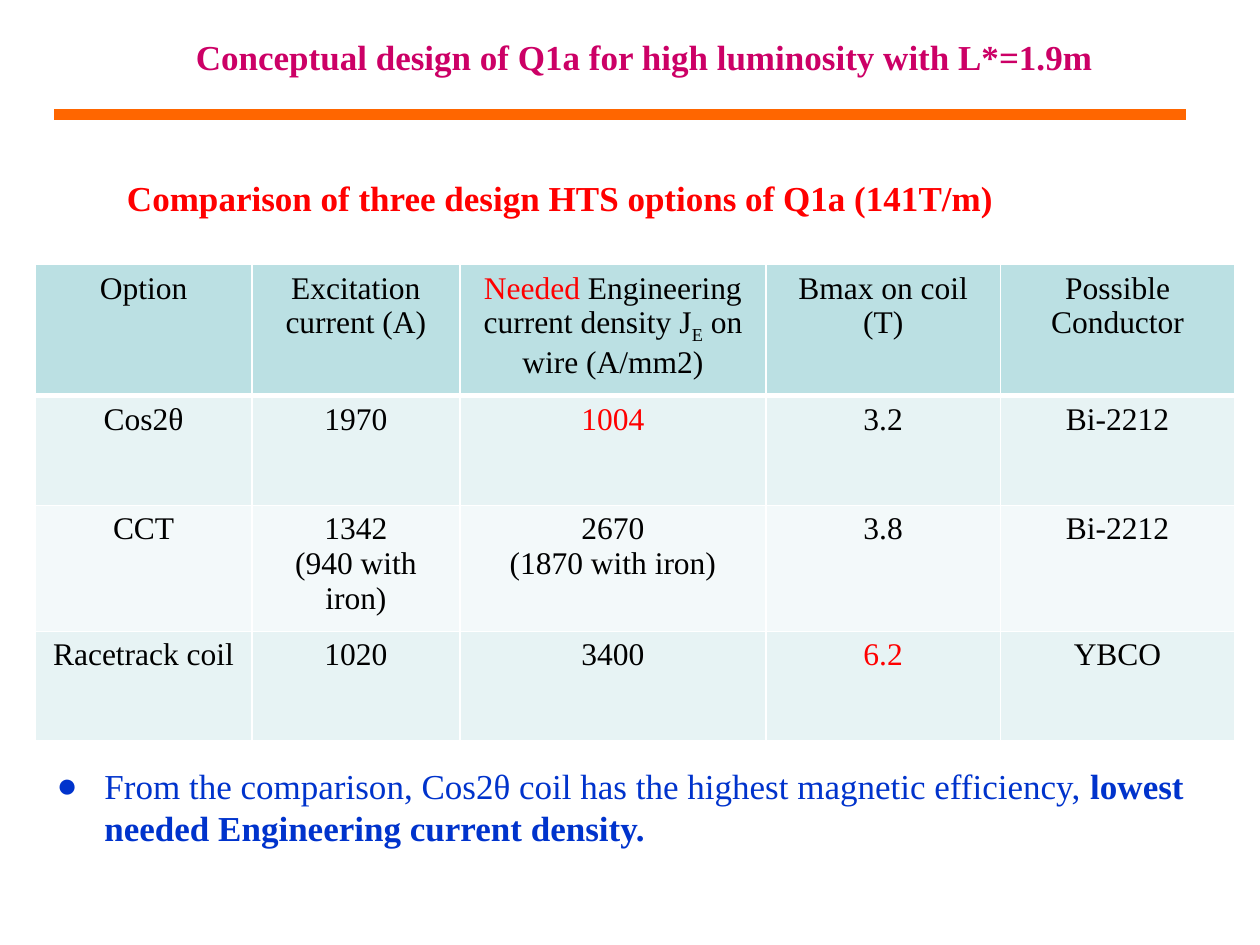
from lxml import etree
from pptx import Presentation
from pptx import util as u
from pptx.dml.color import RGBColor
from pptx.enum import shapes, text
from pptx.oxml import parse_xml
from pptx.oxml.ns import nsdecls, qn

FONT = "Times New Roman"
BLACK, RED, BLUE = "000000", "FF0000", "0033CC"
MAGENTA, ORANGE, WHITE = "CC0066", "FF6600", "FFFFFF"
HEADER_FILL, BAND_FILLS = "BBE0E3", ("E7F3F4", "F3F9FA")

COLUMN_WIDTHS = (1.72, 1.65, 2.43, 1.86, 1.86)
# A cell is a list of paragraphs, a paragraph is a list of (text, style) runs.
NEEDED_DENSITY = [[
    ("Needed", {"color": RED}),
    (" Engineering current density J", {}),
    ("E", {"baseline": -25}),
    (" on wire (A/mm2)", {}),
]]
OPTIONS = (
    ("Option", "Excitation current (A)", NEEDED_DENSITY,
     "Bmax on coil (T)", "Possible Conductor"),
    ("Cos2θ", "1970", [[("1004", {"color": RED})]], "3.2", "Bi-2212"),
    ("CCT", [[("1342", {})], [("(940 with iron)", {})]],
     [[("2670", {})], [("(1870 with iron)", {})]], "3.8", "Bi-2212"),
    ("Racetrack coil", "1020", "3400", [[("6.2", {"color": RED})]], "YBCO"),
)


def rgb(code):
    return RGBColor.from_string(code)


def add_span(para, words, size, color=BLACK, bold=False, baseline=0):
    span = para.add_run()
    span.text = words
    font = span.font
    font.name, font.size, font.bold = FONT, u.Pt(size), bold
    font.color.rgb = rgb(color)
    if baseline:
        font._element.set("baseline", str(baseline * 1000))


def add_text(page, box, anchor=text.MSO_ANCHOR.TOP):
    """Add a wrapping text box and return its first paragraph."""
    frame = page.shapes.add_textbox(*map(u.Inches, box)).text_frame
    frame.word_wrap = True
    frame.vertical_anchor = anchor
    return frame.paragraphs[0]


def add_title(page, box):
    para = add_text(page, box, text.MSO_ANCHOR.MIDDLE)
    para.alignment = text.PP_ALIGN.CENTER
    add_span(para, "Conceptual design of Q1a for high luminosity with L*=1.9m",
             20, MAGENTA, bold=True)


def add_rule(page, left, right, y):
    rule = page.shapes.add_connector(
        shapes.MSO_CONNECTOR.STRAIGHT, *map(u.Inches, (left, y, right, y)))
    rule.line.color.rgb = rgb(ORANGE)
    rule.line.width = u.Pt(6)
    etree.SubElement(rule._element.spPr, qn("a:effectLst"))


def add_subtitle(page, box):
    add_span(add_text(page, box),
             "Comparison of three design HTS options of Q1a (141T/m)",
             20, RED, bold=True)


def set_borders(cell, bottom):
    """Draw white borders of 1 pt, with the bottom one as thick as given."""
    props = cell._tc.get_or_add_tcPr()
    widths = {"lnL": 1, "lnR": 1, "lnT": 1, "lnB": bottom}
    for place, (tag, points) in enumerate(widths.items()):
        props.insert(place, parse_xml(
            f'<a:{tag} {nsdecls("a")} w="{u.Pt(points)}"><a:solidFill>'
            f'<a:srgbClr val="{WHITE}"/></a:solidFill></a:{tag}>'))


def fill_cell(cell, content, fill, bottom):
    cell.fill.solid()
    cell.fill.fore_color.rgb = rgb(fill)
    set_borders(cell, bottom)
    paragraphs = [[(content, {})]] if isinstance(content, str) else content
    frame = cell.text_frame
    for index, spans in enumerate(paragraphs):
        para = frame.add_paragraph() if index else frame.paragraphs[0]
        para.alignment = text.PP_ALIGN.CENTER
        for words, style in spans:
            add_span(para, words, 18, **style)


def add_options_table(page, left, top, row_height):
    table = page.shapes.add_table(
        len(OPTIONS), len(COLUMN_WIDTHS), u.Inches(left), u.Inches(top),
        u.Inches(sum(COLUMN_WIDTHS)),
        u.Inches(row_height * len(OPTIONS))).table
    for column, width in zip(table.columns, COLUMN_WIDTHS):
        column.width = u.Inches(width)
    for r, row in enumerate(OPTIONS):
        table.rows[r].height = u.Inches(row_height)
        fill = BAND_FILLS[(r - 1) % 2] if r else HEADER_FILL
        for c, content in enumerate(row):
            fill_cell(table.cell(r, c), content, fill, bottom=1 if r else 3)


def add_conclusion(page, box):
    para = add_text(page, box)
    props = para._p.get_or_add_pPr()
    indent = u.Inches(0.38)
    props.set("marL", str(indent))
    props.set("indent", str(-indent))
    etree.SubElement(props, qn("a:buFont"), typeface=FONT)
    etree.SubElement(props, qn("a:buChar"), char="●")
    add_span(para, "From the comparison, Cos2θ coil has the highest magnetic "
             "efficiency, ", 20, BLUE)
    add_span(para, "lowest needed Engineering current density.",
             20, BLUE, bold=True)


def main():
    deck = Presentation()
    deck.slide_width, deck.slide_height = u.Inches(10), u.Inches(7.5)
    page = deck.slides.add_slide(deck.slide_layouts[6])
    add_subtitle(page, (0.91, 1.35, 8.5, 0.42))
    add_conclusion(page, (0.35, 6.02, 9.45, 0.8))
    add_rule(page, 0.43, 9.41, 0.91)
    add_title(page, (0.5, 0.13, 9.23, 0.64))
    add_options_table(page, 0.28, 2.1, 0.87)
    deck.save("out.pptx")


if __name__ == "__main__":
    main()
